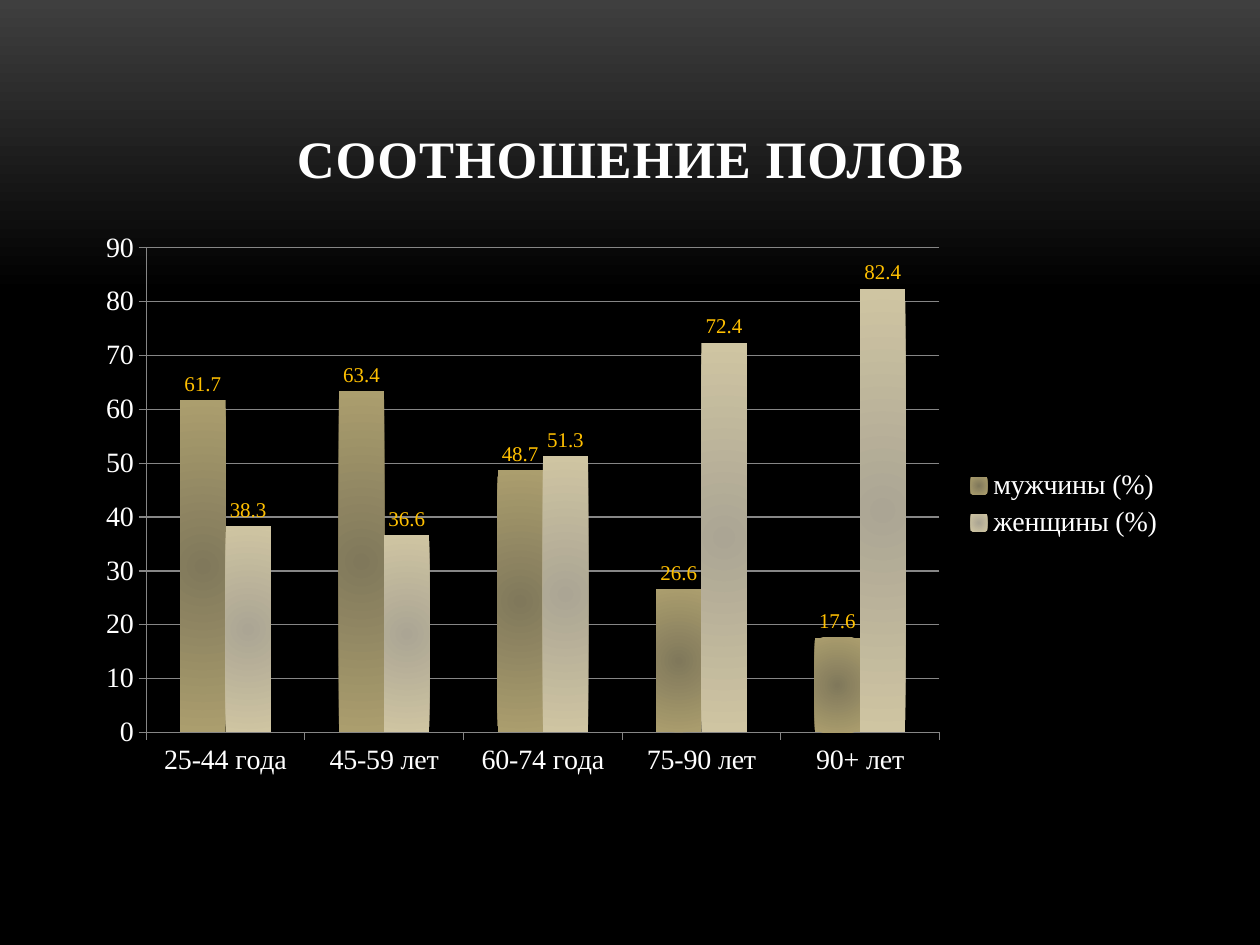
from lxml import etree
from pptx import Presentation
from pptx import util as u
from pptx.chart.data import CategoryChartData
from pptx.dml.color import RGBColor
from pptx.enum import chart as c
from pptx.enum import text
from pptx.oxml import ns

TITLE = "СООТНОШЕНИЕ ПОЛОВ"
AGES = ["25-44 года", "45-59 лет", "60-74 года", "75-90 лет", "90+ лет"]
FONT = "Times New Roman"
WHITE = RGBColor(0xFF, 0xFF, 0xFF)
BLACK = RGBColor(0, 0, 0)
CHARCOAL = RGBColor(0x3F, 0x3F, 0x3F)
GRID_GRAY = RGBColor(0x86, 0x86, 0x86)
GOLD = RGBColor(0xFF, 0xC0, 0x00)
OLIVE, DARK_OLIVE = RGBColor(0xAB, 0x9E, 0x6E), RGBColor(0x80, 0x78, 0x5B)
SAND, DARK_SAND = RGBColor(0xCF, 0xC5, 0xA2), RGBColor(0xAB, 0xA5, 0x94)
SERIES = [
    ("мужчины (%)", [61.7, 63.4, 48.7, 26.6, 17.6], DARK_OLIVE, OLIVE),
    ("женщины (%)", [38.3, 36.6, 51.3, 72.4, 82.4], DARK_SAND, SAND),
]
LEFT, WIDTH = u.Cm(1.7), u.Cm(22.02)


def set_stops(fill, stops):
    fill.gradient()
    for stop, (position, color) in zip(fill.gradient_stops, stops):
        stop.position = position
        stop.color.rgb = color


def style_font(font, size, color):
    font.name = FONT
    font.size = u.Pt(size)
    font.color.rgb = color


def make_radial(series):
    gradient = series._element.find(".//" + ns.qn("a:gradFill"))
    gradient.remove(gradient.find(ns.qn("a:lin")))
    circle = etree.SubElement(gradient, ns.qn("a:path"), path="circle")
    etree.SubElement(circle, ns.qn("a:fillToRect"),
                     l="50000", t="50000", r="50000", b="50000")


def add_title(slide):
    box = slide.shapes.add_textbox(LEFT, u.Cm(0.76), WIDTH, u.Cm(3.18))
    frame = box.text_frame
    frame.word_wrap = True
    frame.vertical_anchor = text.MSO_ANCHOR.BOTTOM
    frame.text = TITLE
    paragraph = frame.paragraphs[0]
    paragraph.alignment = text.PP_ALIGN.CENTER
    font = paragraph.runs[0].font
    style_font(font, 30, WHITE)
    font.bold = True
    paragraph.runs[0]._r.get_or_add_rPr().set("spc", "50")


def add_ratio_chart(slide):
    data = CategoryChartData()
    data.categories = AGES
    for name, values, _, _ in SERIES:
        data.add_series(name, values)
    chart = slide.shapes.add_chart(c.XL_CHART_TYPE.COLUMN_CLUSTERED, LEFT, u.Cm(4.45),
                                   WIDTH, u.Cm(11.43), data).chart
    style_font(chart.font, 16, WHITE)
    chart.has_title = False
    chart.has_legend = True
    chart.legend.position = c.XL_LEGEND_POSITION.RIGHT
    chart.legend.include_in_layout = False

    for axis in (chart.category_axis, chart.value_axis):
        axis.major_tick_mark = c.XL_TICK_MARK.OUTSIDE
        axis.format.line.color.rgb = GRID_GRAY
    value_axis = chart.value_axis
    value_axis.minimum_scale, value_axis.maximum_scale = 0, 90
    value_axis.major_unit = 10
    value_axis.has_major_gridlines = True
    value_axis.major_gridlines.format.line.color.rgb = GRID_GRAY

    plot = chart.plots[0]
    plot.gap_width = 150
    plot.overlap = 0
    plot.vary_by_categories = False
    for series, (_, _, center, edge) in zip(plot.series, SERIES):
        set_stops(series.format.fill, [(0, center), (1, edge)])
        make_radial(series)
        labels = series.data_labels
        labels.show_value = True
        labels.position = c.XL_LABEL_POSITION.OUTSIDE_END
        style_font(labels.font, 12, GOLD)


def main():
    presentation = Presentation()
    presentation.slide_width, presentation.slide_height = u.Cm(25.4), u.Cm(19.05)
    slide = presentation.slides.add_slide(presentation.slide_layouts[6])
    background = slide.background.fill
    set_stops(background, [(0, CHARCOAL), (0.31, BLACK)])
    background.gradient_angle = 270
    add_ratio_chart(slide)
    add_title(slide)
    presentation.save("out.pptx")


if __name__ == "__main__":
    main()
